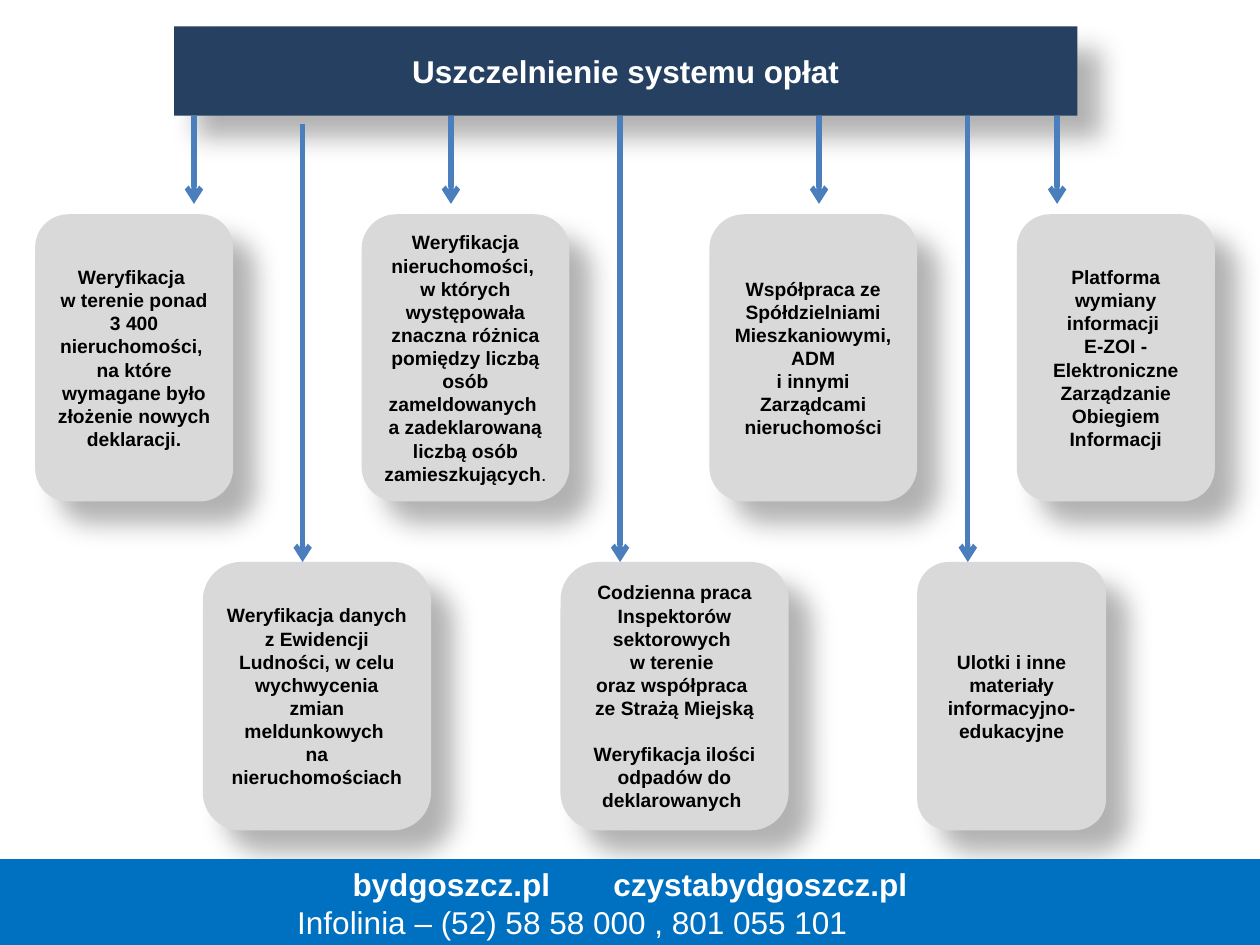
from lxml import etree
from pptx import Presentation
from pptx.dml.color import RGBColor
from pptx.enum.shapes import MSO_CONNECTOR, MSO_SHAPE
from pptx.enum.text import MSO_ANCHOR, PP_ALIGN
from pptx.oxml import parse_xml
from pptx.oxml.ns import nsdecls, qn
from pptx.util import Cm, Pt

ROUND = MSO_SHAPE.ROUNDED_RECTANGLE
RECT = MSO_SHAPE.RECTANGLE
STRAIGHT = MSO_CONNECTOR.STRAIGHT
MIDDLE, TOP = MSO_ANCHOR.MIDDLE, MSO_ANCHOR.TOP
CENTER = PP_ALIGN.CENTER

SHADOW = (
    f'<a:outerShdw {nsdecls("a")} blurRad="{Pt(15)}" dist="{Pt(18)}" '
    'dir="2700000" algn="tl" rotWithShape="0">'
    '<a:srgbClr val="000000"><a:alpha val="30000"/></a:srgbClr></a:outerShdw>'
)


def style(shape, fill, shade):
    """Fill a shape without outline, with or without the soft shadow."""
    shape.fill.solid()
    shape.fill.fore_color.rgb = RGBColor.from_string(fill)
    shape.line.fill.background()
    shape.shadow.inherit = False
    if shade:
        effects = shape._element.spPr.find(qn("a:effectLst"))
        effects.append(parse_xml(SHADOW))


def write(shape, paras, size, color, anchor=MIDDLE):
    """Put centred bold paragraphs into a shape."""
    frame = shape.text_frame
    frame.word_wrap = True
    frame.vertical_anchor = anchor
    look = {"name": "Arial", "size": Pt(size), "bold": True}
    for i, text in enumerate(paras):
        para = frame.paragraphs[0] if i == 0 else frame.add_paragraph()
        para.text = text
        para.alignment = CENTER
        for run in para.runs:
            for key, value in look.items():
                setattr(run.font, key, value)
            run.font.color.rgb = RGBColor.from_string(color)
    return frame.paragraphs


prs = Presentation()
prs.slide_width, prs.slide_height = Cm(25.4), Cm(19.05)
slide = prs.slides.add_slide(prs.slide_layouts[5])
shapes = slide.shapes

# Title banner: the title placeholder with rounded corners
title = shapes.title
place = {"left": 3.51, "top": 0.53, "width": 18.21, "height": 1.8}
for key, value in place.items():
    setattr(title, key, Cm(value))
title._element.spPr.append(parse_xml(
    f'<a:prstGeom {nsdecls("a")} prst="roundRect"><a:avLst/></a:prstGeom>'))
style(title, "254061", True)
write(title, ["Uszczelnienie systemu opłat"], 18, "FFFFFF")

# Cards: two rows of (top, height, [(left, width, paragraphs)])
rows = [
    (4.32, 5.79, [
        (0.71, 3.99, ["Weryfikacja \nw terenie ponad 3 400 nieruchomości, \n"
                      "na które wymagane było złożenie nowych deklaracji."]),
        (7.29, 4.19, ["Weryfikacja nieruchomości, \nw których występowała "
                      "znaczna różnica pomiędzy liczbą osób zameldowanych \n"
                      "a zadeklarowaną liczbą osób zamieszkujących"]),
        (14.3, 4.19, ["Współpraca ze Spółdzielniami Mieszkaniowymi, ADM",
                      "i innymi Zarządcami nieruchomości"]),
        (20.5, 3.99, ["Platforma wymiany informacji ",
                      "E-ZOI - Elektroniczne Zarządzanie Obiegiem Informacji"]),
    ]),
    (11.33, 5.41, [
        (4.09, 4.6, ["Weryfikacja danych z Ewidencji Ludności, w celu "
                     "wychwycenia zmian meldunkowych \nna nieruchomościach"]),
        (11.3, 4.6, ["Codzienna praca Inspektorów sektorowych \nw terenie ",
                     "oraz współpraca \nze Strażą Miejską",
                     "Weryfikacja ilości odpadów do deklarowanych "]),
        (18.49, 3.81, ["Ulotki i inne materiały informacyjno-edukacyjne"]),
    ]),
]
cards = []
for top, height, row in rows:
    for left, width, paras in row:
        card = shapes.add_shape(ROUND, Cm(left), Cm(top), Cm(width), Cm(height))
        style(card, "D9D9D9", True)
        cards.append(write(card, paras, 11, "000000"))

# The second card ends in a plain full stop
stop = cards[1][0].add_run()
stop.text = "."
look = {"name": "Arial", "size": Pt(11), "bold": False}
for key, value in look.items():
    setattr(stop.font, key, value)
stop.font.color.rgb = RGBColor.from_string("000000")

# A line's gap before the last paragraph of the sixth card
cards[5][2].space_before = Pt(13)

# Arrows from the banner down to each row: (x, start, end)
arrows = [(x, 2.34, 4.11) for x in (3.91, 9.09, 16.51, 21.31)]
arrows += [(6.1, 2.51, 11.33), (12.5, 2.34, 11.33), (19.51, 2.34, 11.33)]
for x, start, end in arrows:
    arrow = shapes.add_connector(STRAIGHT, Cm(x), Cm(start), Cm(x), Cm(end))
    arrow.line.width = Pt(3)
    arrow.line.color.rgb = RGBColor.from_string("4B7EBC")
    props = arrow._element.spPr
    etree.SubElement(props.find(qn("a:ln")), qn("a:tailEnd"), type="arrow")
    etree.SubElement(props, qn("a:effectLst"))

# Footer band with contacts
foot = shapes.add_shape(RECT, 0, Cm(17.32), prs.slide_width, Cm(1.8))
style(foot, "0070C0", False)
web, phone = write(foot, ["bydgoszcz.pl \t czystabydgoszcz.pl",
                          "Infolinia – (52) 58 58 000 , 801 055 101"],
                   18, "FFFFFF", TOP)
phone.runs[0].font.bold = False
phone._p.get_or_add_pPr().set("marR", str(Pt(66)))

prs.save("out.pptx")
